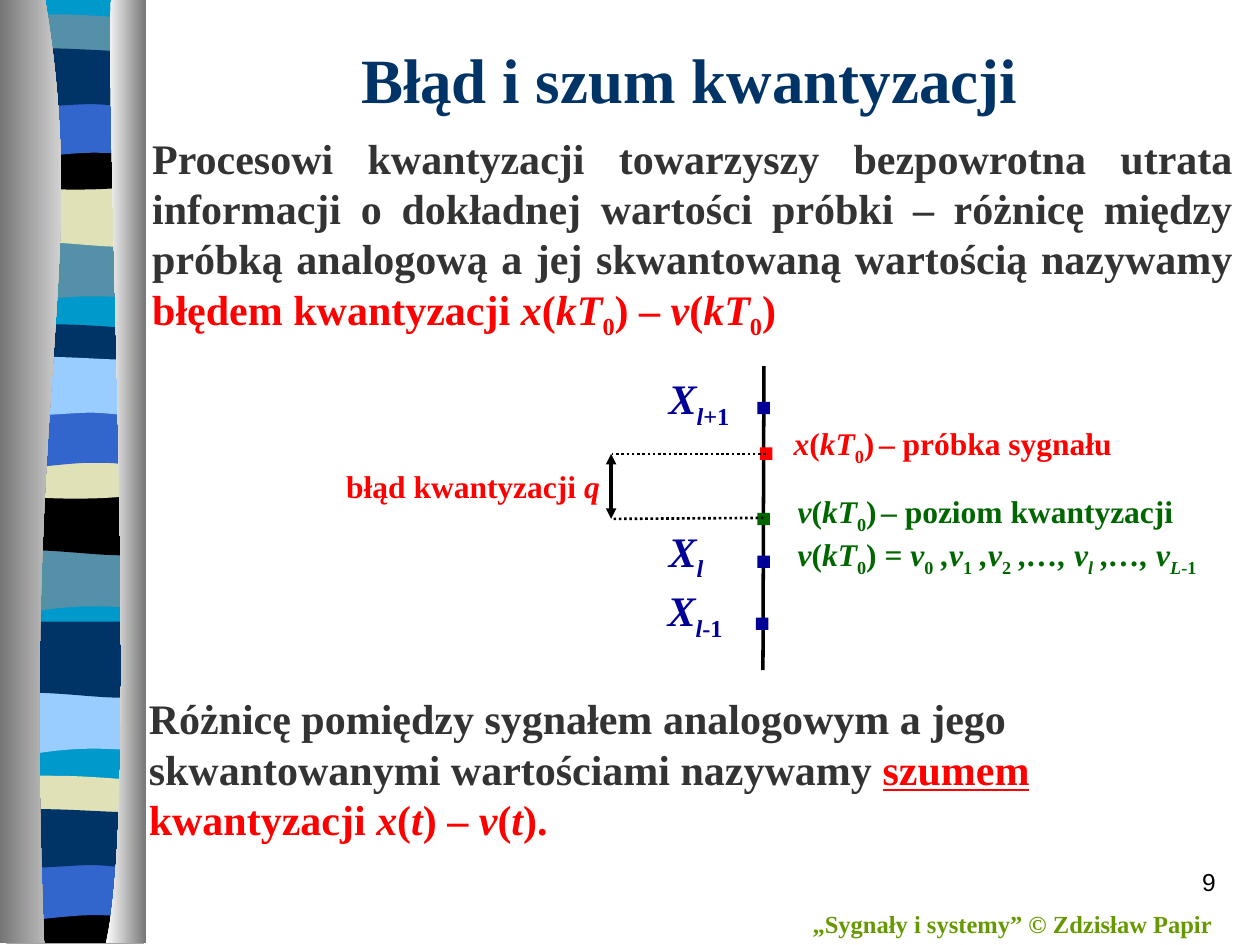
from lxml import etree
from pptx import Presentation
from pptx.dml.color import RGBColor
from pptx.enum.dml import MSO_LINE
from pptx.enum.shapes import MSO_CONNECTOR, MSO_SHAPE
from pptx.enum.text import MSO_ANCHOR, PP_ALIGN
from pptx.oxml.ns import qn
from pptx.util import Cm, Pt

LEFT, CENTER, RIGHT, JUSTIFY = PP_ALIGN.LEFT, PP_ALIGN.CENTER, PP_ALIGN.RIGHT, PP_ALIGN.JUSTIFY
TOP, MIDDLE = MSO_ANCHOR.TOP, MSO_ANCHOR.MIDDLE
SERIF, SANS = "Times New Roman", "Arial"
NAVY, GREY, RED, GREEN, BLUE = "003366", "333333", "FF0000", "006600", "000099"
OLIVE, BLACK, WHITE, STEEL = "669900", "000000", "FFFFFF", "767676"
TEAL, SAND, ROYAL, SKY, CYAN = "5490A8", "E1E1B7", "3366CC", "99CCFF", "0099CC"

# Ribbon: band profiles in cm below the band's top. A curve is two controls and an end.
BAND_LEFT, BAND_RIGHT, FOOT = 0.13, 2.9, 19.02
OVERLAP = 0.14  # each band reaches this far past its top and bottom
DIP = [[(1.83, 0.13), (2.31, 0), (2.9, 0)]]
PROFILES = {  # name: (height, top curves left to right, bottom curves right to left)
    "wave": (1.19, [], [[(0.99, 0.99), (0.61, 1.4), (0.13, 1.19)]]),
    "crest": (1.19, [], [[(2.44, 1.39), (0.99, 1.05), (0.13, 1.19)]]),
    "lens": (0.61, [[(0.3, -0.13), (0.74, -0.1), (1.19, -0.1)],
                    [(1.65, -0.1), (2.54, -0.03), (2.9, 0)]],
             [[(2.44, 0.73), (0.61, 0.73), (0.13, 0.61)]]),
    "bowl": (0.83, DIP, [[(2.44, 0.98), (0.61, 0.98), (0.13, 0.83)]]),
    "foot": (0.8, DIP, []),
    "arch": (1.19, [], [[(2.46, 1.06), (2.29, 1.06), (1.83, 1.06)],
                        [(1.37, 1.06), (0.56, 1.19), (0.13, 1.19)]]),
    "swell": (0.79, [[(0.53, -0.13), (2.01, 0), (2.46, 0)]],
              [[(2.72, 0.91), (2.29, 0.79), (1.83, 0.79)],
               [(1.37, 0.79), (0.43, 0.91), (0.13, 0.79)]]),
}
BANDS = [  # profile, top, colour; back to front
    ("wave", 4.7, TEAL), ("crest", 3.58, SAND), ("lens", 0.53, TEAL),
    ("bowl", 2.74, BLACK), ("arch", 1.88, ROYAL), ("swell", 1.17, NAVY),
    ("wave", 10.95, TEAL), ("crest", 9.8, BLACK), ("lens", 6.78, NAVY),
    ("bowl", 8.97, SAND), ("arch", 8.13, ROYAL), ("swell", 7.39, SKY),
    ("wave", 13.82, SKY), ("crest", 12.67, NAVY), ("lens", 15.88, SAND),
    ("foot", 18.08, BLACK), ("arch", 17.25, ROYAL), ("swell", 16.51, NAVY),
]
COLUMNS = [  # start, curve, outer edge, gradient from left to right
    ((0.91, 0), [(1.83, 5.49), (0.43, 7.52), (0.89, FOOT)], 0, (STEEL, WHITE)),
    ((2.24, 0), [(2.13, 3.18), (2.82, 16.41), (2.13, FOOT)], 2.95, (WHITE, STEEL)),
]

# Text runs: (text, marks) with i italic, s subscript, u underline, r red


def of_sample(name):
    return [(name, "i"), ("(", ""), ("kT", "i"), ("0", "s")]


def red(runs):
    return [(text, marks + "r") for text, marks in runs]


def level(*index):
    return [[("X", "i"), *index]]


def legend(name, meaning):
    return [*of_sample(name), (")", ""), (" ", "s"), ("– " + meaning, "")]


LOSS = [("Procesowi kwantyzacji towarzyszy bezpowrotna utrata informacji o dokładnej "
         "wartości próbki – różnicę między próbką analogową a jej skwantowaną "
         "wartością nazywamy ", "")]
LOSS += red([("błędem kwantyzacji ", ""), *of_sample("x"), (") –", ""),
             *of_sample(" v"), (")", "")])
NOISE = [("Różnicę pomiędzy sygnałem analogowym a jego skwantowanymi wartościami "
          "nazywamy ", ""), ("szumem", "ur"), (" ", "")]
NOISE += red([("kwantyzacji ", ""), ("x", "i"), ("(", ""), ("t", "i"), (") –", ""),
              (" v", "i"), ("(", ""), ("t", "i"), (").", "")])
LEVEL_LIST = [*of_sample("v"), (") = ", ""), ("v", "i"), ("0", "s"), (" ,v", "i"),
              ("1", "s"), (" ,v", "i"), ("2", "s"), (" ,…, v", "i"), ("l", "is"),
              (" ,…, v", "i"), ("L", "is"), ("-1", "s")]

TEXTS = [  # box, paragraphs, size, colour, align, wrap, anchor
    ((3.1, 0, 21.59, 3.15), [[("Błąd i szum kwantyzacji", "")]], 36, NAVY, CENTER, True, MIDDLE),
    ((2.82, 2.54, 22.28, 4.37), [LOSS], 24, GREY, JUSTIFY, True, TOP),
    ((16.13, 18.21, 8.66, 0.86), [[("„Sygnały i systemy” © Zdzisław Papir", "")]],
     14, OLIVE, LEFT, False, TOP),
    ((13.23, 10.46, 1.45, 1.27), level(("l", "is")), 24, BLUE, LEFT, False, TOP),
    ((13.23, 7.39, 1.85, 1.27), level(("l", "is"), ("+1", "s")), 24, BLUE, LEFT, False, TOP),
    ((13.21, 11.66, 1.73, 1.27), level(("l", "is"), ("-1", "s")), 24, BLUE, LEFT, False, TOP),
    ((15.75, 8.43, 7.19, 1.02), [legend("x", "próbka sygnału")], 18, RED, LEFT, False, TOP),
    ((6.73, 9.3, 5.87, 1.02), [[("błąd kwantyzacji ", ""), ("q", "i")]],
     18, RED, LEFT, False, TOP),
    ((19.48, 17.35, 5.28, 1.27), [[("9", "")]], 14, BLACK, RIGHT, True, TOP),
    ((2.75, 13.84, 22.28, 3.33), [NOISE], 24, GREY, LEFT, True, TOP),
    ((15.83, 9.8, 8.84, 1.8), [legend("v", "poziom kwantyzacji"), LEVEL_LIST],
     18, GREEN, LEFT, False, TOP),
]

# Diagram: axis, level markers and error bracket
MARKER = 0.25
MARKERS = [(15.24, 12.45, BLUE), (15.27, 8.1, BLUE), (15.27, 11.2, BLUE),
           (15.27, 10.34, GREEN), (15.32, 9.02, RED)]
AXIS = ((15.4, 7.38), (15.38, 13.51), 2)
BRACKET = [  # from, to, width, dotted, arrows
    ((15.44, 9.15), (12.34, 9.15), 1.5, True, False),
    ((15.39, 10.44), (12.32, 10.46), 1.5, True, False),
    ((12.32, 9.15), (12.32, 10.46), 2, False, True),
]


def color(value):
    return RGBColor.from_string(value)


def add_outline(slide, pieces):
    """Closed outline of pieces: a point is a corner, a list of three points a curve."""
    points = [point for piece in pieces
              for point in (piece if isinstance(piece, list) else [piece])]
    corners = [(Cm(x), Cm(y)) for x, y in points]
    builder = slide.shapes.build_freeform(*corners[0], scale=1.0)
    builder.add_line_segments(corners[1:], close=True)
    shape = builder.convert_to_shape()
    segments = iter(list(shape._element.iter(qn("a:lnTo"))))
    for piece in pieces[1:]:
        segment = next(segments)
        if isinstance(piece, list):
            segment.tag = qn("a:cubicBezTo")
            for _ in piece[1:]:
                following = next(segments)
                segment.append(following[0])
                following.getparent().remove(following)
    shape.shadow.inherit = False
    shape.line.fill.background()
    return shape


def fill_solid(shape, value):
    shape.fill.solid()
    shape.fill.fore_color.rgb = color(value)


def shift(curves, distance):
    return [[(x, y + distance) for x, y in curve] for curve in curves]


def add_ribbon(slide):
    base = [(BAND_LEFT, 0), (BAND_RIGHT, 0), (BAND_RIGHT, FOOT), (BAND_LEFT, FOOT)]
    fill_solid(add_outline(slide, base), CYAN)
    for name, start, value in BANDS:
        height, upper, lower = PROFILES[name]
        top, bottom = start - OVERLAP, start + OVERLAP
        pieces = [(BAND_LEFT, top), *shift(upper, top)]
        if not upper or upper[-1][-1] != (BAND_RIGHT, 0):
            pieces.append((BAND_RIGHT, top))
        pieces += [(BAND_RIGHT, bottom + height), *shift(lower, bottom)]
        if not lower:
            pieces.append((BAND_LEFT, bottom + height))
        fill_solid(add_outline(slide, pieces), value)
    for start, curve, edge, shades in COLUMNS:
        shape = add_outline(slide, [start, curve, (edge, FOOT), (edge, 0)])
        shape.fill.gradient()
        shape.fill.gradient_angle = 0
        for stop, shade in zip(shape.fill.gradient_stops, shades):
            stop.color.rgb = color(shade)


def add_text(slide, box, paragraphs, size, value, align, wrap, anchor):
    frame = slide.shapes.add_textbox(*map(Cm, box)).text_frame
    frame.word_wrap, frame.vertical_anchor = wrap, anchor
    for number, runs in enumerate(paragraphs):
        paragraph = frame.add_paragraph() if number else frame.paragraphs[0]
        paragraph.alignment = align
        font = paragraph.font
        font.name = SANS if value == BLACK else SERIF
        font.size, font.bold, font.color.rgb = Pt(size), value != BLACK, color(value)
        for text, marks in runs:
            run = paragraph.add_run()
            run.text = text
            if "i" in marks:
                run.font.italic = True
            if "u" in marks:
                run.font.underline = True
            if "r" in marks:
                run.font.color.rgb = color(RED)
            if "s" in marks:
                run._r.get_or_add_rPr().set("baseline", "-25000")


def add_line(slide, start, end, width, dotted=False, arrows=False):
    line = slide.shapes.add_connector(MSO_CONNECTOR.STRAIGHT, *map(Cm, start + end))
    line.line.color.rgb, line.line.width = color(BLACK), Pt(width)
    if dotted:
        line.line.dash_style = MSO_LINE.ROUND_DOT
    if arrows:
        for tag in ("a:headEnd", "a:tailEnd"):
            etree.SubElement(line.line._get_or_add_ln(), qn(tag), type="triangle")
    etree.SubElement(line._element.spPr, qn("a:effectLst"))


presentation = Presentation()
presentation.slide_width, presentation.slide_height = Cm(25.4), Cm(19.05)
slide = presentation.slides.add_slide(presentation.slide_layouts[6])
add_ribbon(slide)
add_line(slide, *AXIS)
for left, top, value in MARKERS:
    marker = slide.shapes.add_shape(MSO_SHAPE.RECTANGLE, *map(Cm, (left, top, MARKER, MARKER)))
    marker.shadow.inherit = False
    marker.line.fill.background()
    fill_solid(marker, value)
for line in BRACKET:
    add_line(slide, *line)
for text in TEXTS:
    add_text(slide, *text)
presentation.save("out.pptx")
